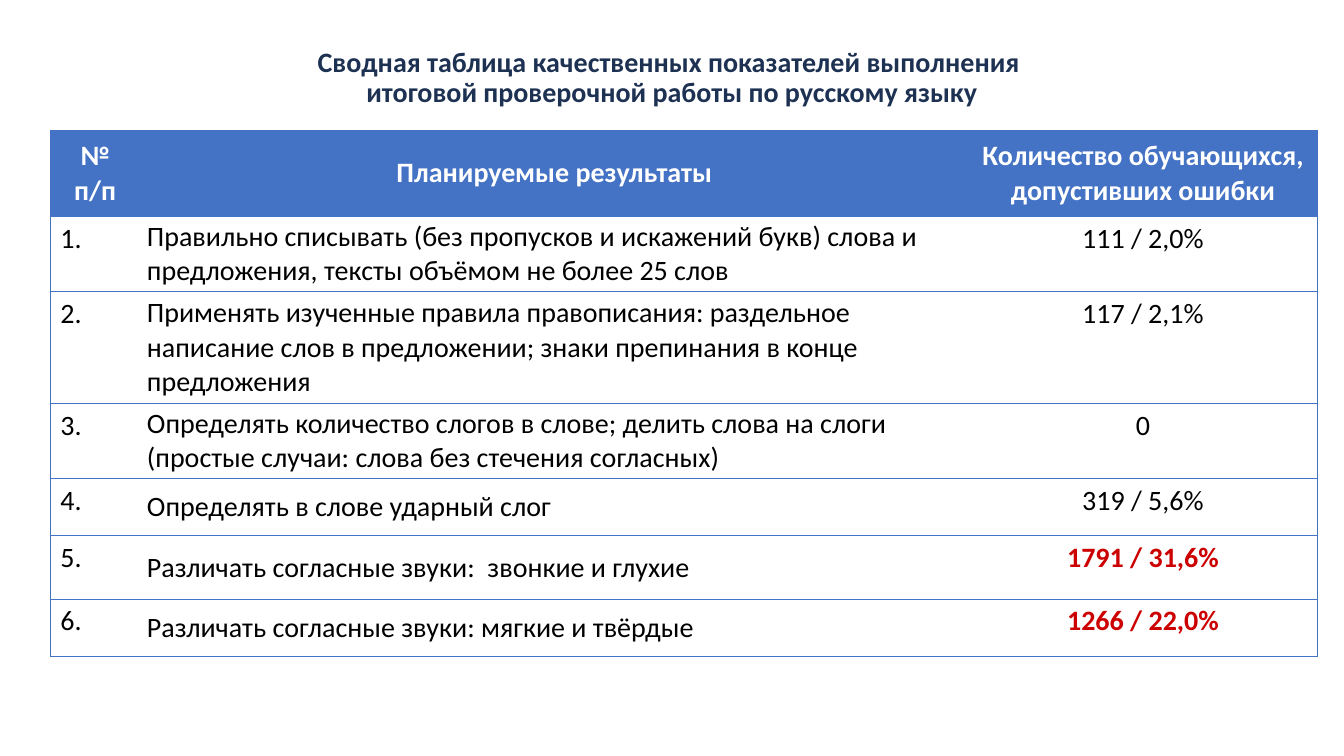
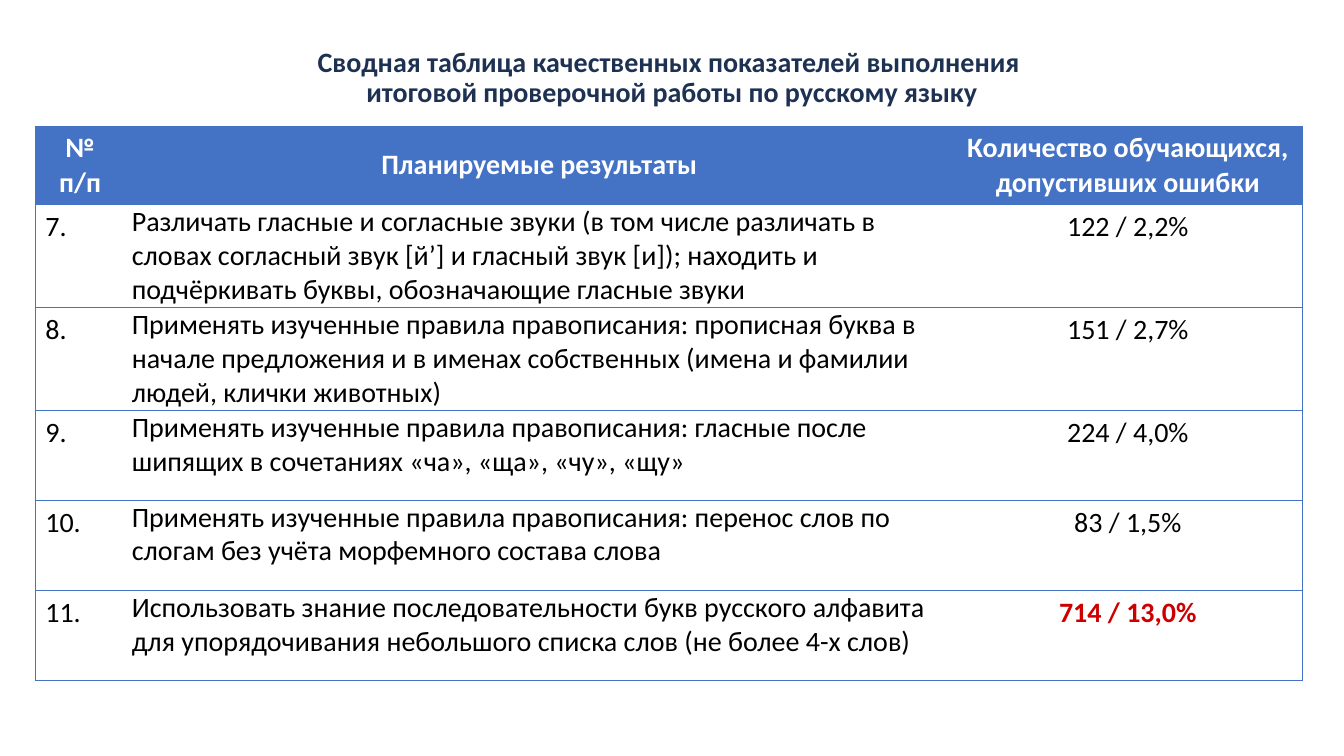
from dataclasses import dataclass
from typing import NamedTuple

from lxml import etree
from pptx import Presentation
from pptx.dml.color import RGBColor
from pptx.enum.text import MSO_ANCHOR, MSO_AUTO_SIZE, PP_ALIGN
from pptx.oxml.ns import qn
from pptx.util import Pt

LEFT, CENTER = PP_ALIGN.LEFT, PP_ALIGN.CENTER
TOP, MIDDLE = MSO_ANCHOR.TOP, MSO_ANCHOR.MIDDLE
NO_AUTOFIT = MSO_AUTO_SIZE.NONE
TITLE_ONLY = 5


@dataclass(frozen=True)
class Theme:
    font: str = "Calibri"
    size: float = 20
    border_width: float = 0.5
    title: str = "1D3152"
    accent: str = "4472C4"
    header_text: str = "FFFFFF"
    text: str = "000000"
    warning: str = "CC0000"


THEME = Theme()


class Outcome(NamedTuple):
    skill: str
    errors: str
    height: float
    alarming: bool = False
    line_spacing: float = 1.0


class Summary(NamedTuple):
    left: float
    top: float
    header_height: float
    skill_anchor: MSO_ANCHOR
    first_number: int
    outcomes: list[Outcome]


TITLE_LINES = (
    "Сводная таблица качественных показателей выполнения ",
    "итоговой проверочной работы по русскому языку",
)
HEADERS = ("№ п/п", "Планируемые результаты", "Количество обучающихся, допустивших ошибки")
COLUMN_WIDTHS = (64, 592, 249)

SUMMARIES = [
    Summary(36, 93, 61.6, MIDDLE, 1, [
        Outcome("Правильно списывать (без пропусков и искажений букв) слова и "
                "предложения, тексты объёмом не более 25 слов", "111 / 2,0%", 53.5),
        Outcome("Применять изученные правила правописания: раздельное написание слов "
                "в предложении; знаки препинания в конце предложения", "117 / 2,1%", 80.3),
        Outcome("Определять количество слогов в слове; делить слова на слоги "
                "(простые случаи: слова без стечения согласных)", "0", 53.5),
        Outcome("Определять в слове ударный слог", "319 / 5,6%", 40.8),
        Outcome("Различать согласные звуки:  звонкие и глухие", "1791 / 31,6%", 45.4, True),
        Outcome("Различать согласные звуки: мягкие и твёрдые", "1266 / 22,0%", 40.8, True),
    ]),
    Summary(25.2, 90, 56, TOP, 7, [
        Outcome("Различать гласные и согласные звуки (в том числе различать в словах "
                "согласный звук [й’] и гласный звук [и]); находить и подчёркивать буквы, "
                "обозначающие гласные звуки", "122 / 2,2%", 73.3),
        Outcome("Применять изученные правила правописания: прописная буква в начале "
                "предложения и в именах собственных (имена и фамилии людей, клички "
                "животных)", "151 / 2,7%", 73.3),
        Outcome("Применять изученные правила правописания: гласные после шипящих "
                "в сочетаниях «ча», «ща», «чу», «щу»", "224 / 4,0%", 64.3),
        Outcome("Применять изученные правила правописания: перенос слов по слогам "
                "без учёта морфемного состава слова", "83 / 1,5%", 64.3,
                line_spacing=0.98),
        Outcome("Использовать знание последовательности букв русского алфавита для "
                "упорядочивания небольшого списка слов (не более 4-х слов)",
                "714 / 13,0%", 64.3, True),
    ]),
]


def add_run(paragraph, text: str, color: str, bold: bool) -> None:
    run = paragraph.add_run()
    run.text = text
    run.font.name = THEME.font
    run.font.size = Pt(THEME.size)
    run.font.bold = bold
    run.font.color.rgb = RGBColor.from_string(color)


def add_title(slide) -> None:
    title = slide.shapes.title
    title.left, title.top, title.width, title.height = Pt(55.5), Pt(19.5), Pt(849), Pt(72.5)
    frame = title.text_frame
    frame.word_wrap = True
    frame.auto_size = NO_AUTOFIT
    frame.vertical_anchor = MIDDLE
    heading = frame.paragraphs[0]
    heading.alignment = CENTER
    heading.line_spacing = 0.9
    for index, line in enumerate(TITLE_LINES):
        if index:
            heading.add_line_break()
        add_run(heading, line, THEME.title, True)


def set_borders(cell, sides: str) -> None:
    """Draw the given sides out of L, R, T and B and clear the others."""
    properties = cell._tc.get_or_add_tcPr()
    for index, side in enumerate("LRTB"):
        line = etree.Element(qn(f"a:ln{side}"), w=str(Pt(THEME.border_width)))
        if side in sides:
            fill = etree.SubElement(line, qn("a:solidFill"))
            etree.SubElement(fill, qn("a:srgbClr"), val=THEME.accent)
        else:
            etree.SubElement(line, qn("a:noFill"))
        properties.insert(index, line)


def fill_cell(cell, text: str, color: str, bold: bool = False,
              align: PP_ALIGN = CENTER, anchor: MSO_ANCHOR = TOP,
              line_spacing: float = 1.0) -> None:
    cell.vertical_anchor = anchor
    paragraph = cell.text_frame.paragraphs[0]
    paragraph.alignment = align
    paragraph.line_spacing = line_spacing
    add_run(paragraph, text, color, bold)


def add_header(table) -> None:
    for column, text in enumerate(HEADERS):
        cell = table.cell(0, column)
        cell.fill.solid()
        cell.fill.fore_color.rgb = RGBColor.from_string(THEME.accent)
        fill_cell(cell, text, THEME.header_text, bold=True, anchor=MIDDLE)


def add_outcome(table, row: int, number: int, outcome: Outcome, skill_anchor: MSO_ANCHOR) -> None:
    table.rows[row].height = Pt(outcome.height)
    number_cell, skill_cell, errors_cell = table.rows[row].cells
    for cell in (number_cell, skill_cell, errors_cell):
        cell.fill.background()
    fill_cell(number_cell, f"{number}.", THEME.text, align=LEFT)
    skill_cell.margin_left = skill_cell.margin_right = Pt(5)
    skill_cell.margin_top = skill_cell.margin_bottom = 0
    fill_cell(skill_cell, outcome.skill, THEME.text, align=LEFT,
              anchor=skill_anchor, line_spacing=outcome.line_spacing)
    errors_color = THEME.warning if outcome.alarming else THEME.text
    fill_cell(errors_cell, outcome.errors, errors_color, bold=outcome.alarming)


def add_summary(slide, summary: Summary) -> None:
    height = summary.header_height + sum(outcome.height for outcome in summary.outcomes)
    table = slide.shapes.add_table(
        len(summary.outcomes) + 1, len(HEADERS), Pt(summary.left), Pt(summary.top),
        Pt(sum(COLUMN_WIDTHS)), Pt(height)).table
    table.horz_banding = False
    for column, width in zip(table.columns, COLUMN_WIDTHS):
        column.width = Pt(width)
    table.rows[0].height = Pt(summary.header_height)
    add_header(table)
    for row, outcome in enumerate(summary.outcomes, start=1):
        add_outcome(table, row, summary.first_number + row - 1, outcome, summary.skill_anchor)
    for row in table.rows:
        for cell, sides in zip(row.cells, ("LTB", "TB", "RTB")):
            set_borders(cell, sides)


def main() -> None:
    deck = Presentation()
    deck.slide_width, deck.slide_height = Pt(960), Pt(540)
    for summary in SUMMARIES:
        slide = deck.slides.add_slide(deck.slide_layouts[TITLE_ONLY])
        add_title(slide)
        add_summary(slide, summary)
    deck.save("out.pptx")


if __name__ == "__main__":
    main()
